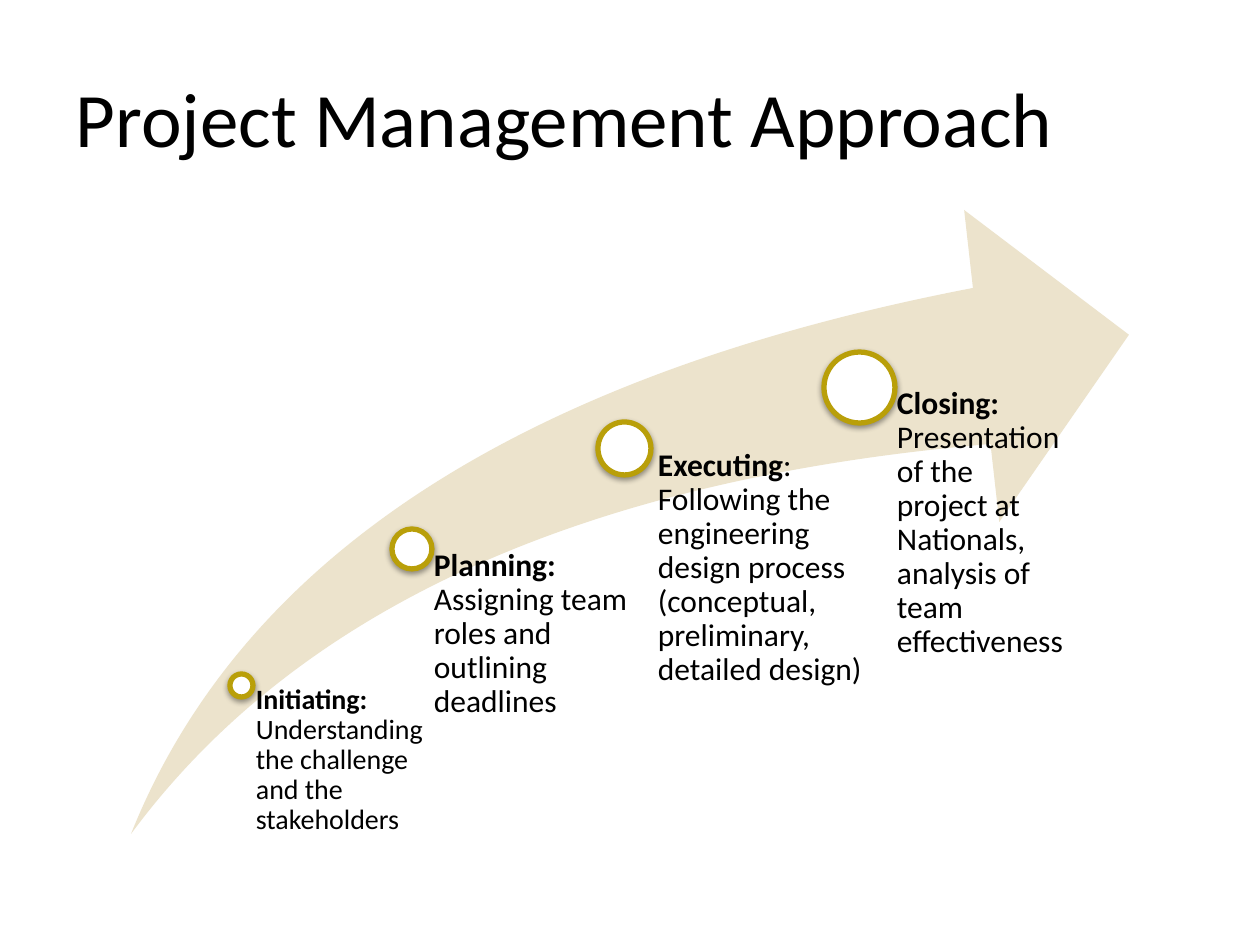
"""Build a slide with four project stages along a rising arrow."""
from lxml import etree
from pptx import Presentation
from pptx.dml.color import RGBColor
from pptx.enum.shapes import MSO_SHAPE
from pptx.enum.text import MSO_ANCHOR
from pptx.oxml.ns import qn
from pptx.util import Pt

PX = 914400 // 126
ELLIPSE, SWOOSH = MSO_SHAPE.OVAL, MSO_SHAPE.SWOOSH_ARROW
TOP, MIDDLE = MSO_ANCHOR.TOP, MSO_ANCHOR.MIDDLE
FONT = "Calibri"
BLACK, WHITE, GOLD, SAND = "000000", "FFFFFF", "B99F09", "ECE3CC"

TITLE = "Project Management Approach"
TITLE_BOX = (63, 38, 1134, 157)
ARROW_BOX = (131, 210, 998, 624)
TEXT_BOTTOM = 834
# center x, center y, diameter, text left, text width, inset, size, bold text, plain text
STAGES = [
    (241, 685, 23, 243, 188, 13, 16, "Initiating: ",
     "Understanding the challenge and the stakeholders"),
    (412, 549, 40, 413, 228, 21, 18, "Planning: ",
     "Assigning team roles and outlining deadlines"),
    (625, 449, 53, 630, 242, 28, 18, "Executing",
     ": Following the engineering design process (conceptual, preliminary, detailed design)"),
    (859, 387, 71, 859, 209, 38, 18, "Closing: ",
     "Presentation of the project at Nationals, analysis of team effectiveness"),
]


def color(value):
    return RGBColor.from_string(value)


def scale(box):
    return [length * PX for length in box]


def add_shape(slide, kind, box, fill):
    shape = slide.shapes.add_shape(kind, *scale(box))
    shape.shadow.inherit = False
    shape.fill.solid()
    shape.fill.fore_color.rgb = color(fill)
    shape.line.fill.background()
    return shape


def add_marker(slide, center_x, center_y, diameter):
    box = (center_x - diameter / 2, center_y - diameter / 2, diameter, diameter)
    marker = add_shape(slide, ELLIPSE, [round(length) for length in box], WHITE)
    marker.line.color.rgb = color(GOLD)
    marker.line.width = Pt(3)
    effects = marker._element.spPr.find(qn("a:effectLst"))
    shadow = etree.SubElement(effects, qn("a:outerShdw"), blurRad="40000",
                              dist="20000", dir="5400000", rotWithShape="0")
    shade = etree.SubElement(shadow, qn("a:srgbClr"), val=BLACK)
    etree.SubElement(shade, qn("a:alpha"), val="38000")


def add_text(slide, box, parts, size, anchor, insets):
    frame = slide.shapes.add_textbox(*scale(box)).text_frame
    frame.word_wrap = True
    frame.vertical_anchor = anchor
    (frame.margin_left, frame.margin_top,
     frame.margin_right, frame.margin_bottom) = scale(insets)
    paragraph = frame.paragraphs[0]
    for text, bold in parts:
        run = paragraph.add_run()
        run.text = text
        run.font.name = FONT
        run.font.size = Pt(size)
        run.font.bold = bold
        run.font.color.rgb = color(BLACK)
    return paragraph


def main():
    presentation = Presentation()
    presentation.slide_width, presentation.slide_height = scale((1260, 945))
    slide = presentation.slides.add_slide(presentation.slide_layouts[6])
    add_text(slide, TITLE_BOX, [(TITLE, False)], 44, MIDDLE, (13, 6, 13, 6))
    arrow = add_shape(slide, SWOOSH, ARROW_BOX, SAND)
    arrow.adjustments[0] = arrow.adjustments[1] = 0.25
    for x, y, diameter, left, width, inset, size, name, detail in STAGES:
        add_marker(slide, x, y, diameter)
        paragraph = add_text(slide, (left, y, width, TEXT_BOTTOM - y),
                             [(name, True), (detail, False)], size, TOP, (inset, 0, 0, 0))
        paragraph.line_spacing = 0.9
    presentation.save("out.pptx")


if __name__ == "__main__":
    main()
